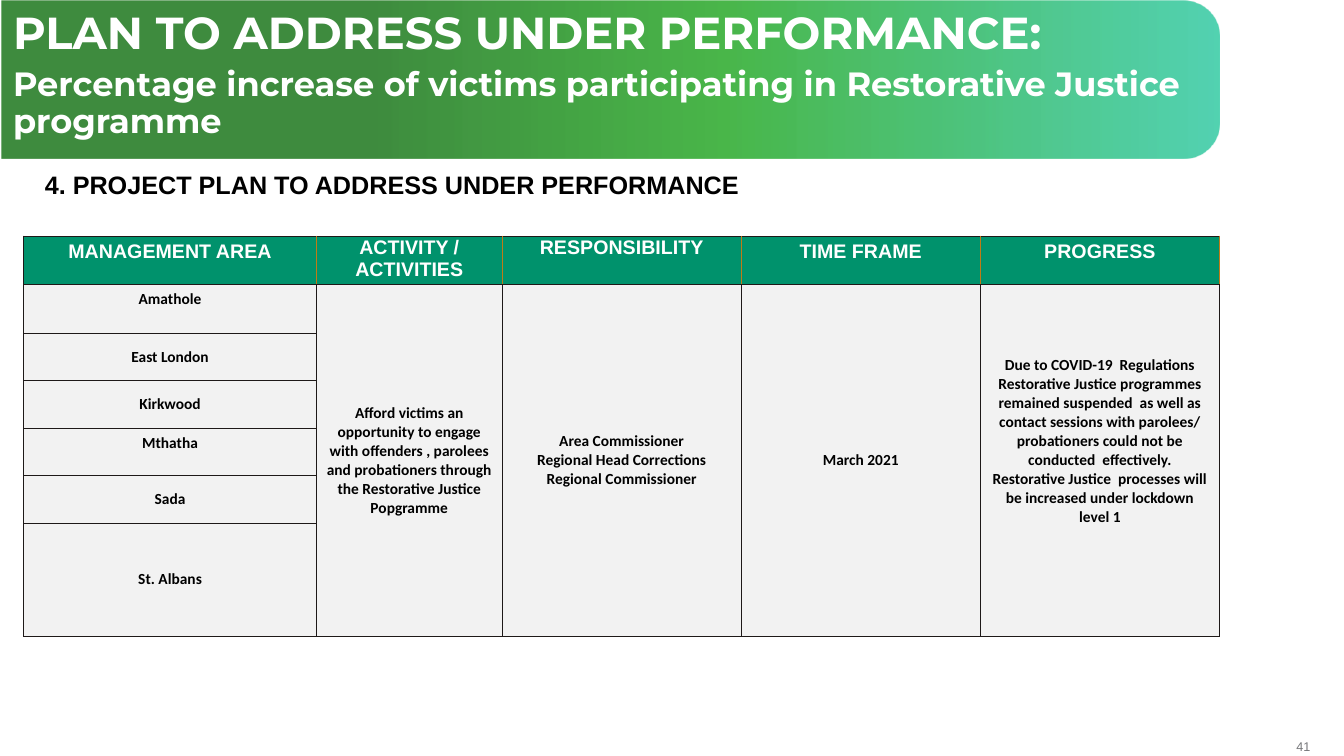
import pptx
import pptx.util
import pptx.oxml
import pptx.oxml.ns
import pptx.dml.color
import pptx.enum.shapes
import pptx.enum.text

Pt = pptx.util.Pt
ALIGN = pptx.enum.text.PP_ALIGN
ANCHOR = pptx.enum.text.MSO_ANCHOR
NAMESPACE = pptx.oxml.ns.nsdecls("a")
COLORS = {
    "white": "FFFFFF", "black": "000000", "gray": "77787B",
    "header": "00926C", "body": "F2F2F2", "border": "1E1918", "divider": "BF7B17",
}


def write_text(frame, lines, font, color, sizes, bold=True, align=ALIGN.LEFT, spacing=None):
    frame.word_wrap = True
    for index, line in enumerate(lines):
        paragraph = frame.paragraphs[0] if index == 0 else frame.add_paragraph()
        paragraph.alignment = align
        for name, value in (spacing or {}).items():
            setattr(paragraph, name, value)
        run = paragraph.add_run()
        run.text = line
        for name, value in {"name": font, "size": Pt(sizes[index]), "bold": bold}.items():
            setattr(run.font, name, value)
        run.font.color.rgb = pptx.dml.color.RGBColor.from_string(COLORS[color])


def style_cell(cell, fill, sides):
    properties = cell._tc.get_or_add_tcPr()
    for side, color in sides.items():
        properties.append(pptx.oxml.parse_xml(
            f'<a:ln{side} {NAMESPACE} w="6350"><a:solidFill>'
            f'<a:srgbClr val="{COLORS[color]}"/></a:solidFill></a:ln{side}>'))
    cell.fill.solid()
    cell.fill.fore_color.rgb = pptx.dml.color.RGBColor.from_string(COLORS[fill])


presentation = pptx.Presentation()
presentation.slide_width = Pt(960)
presentation.slide_height = Pt(540)
slide = presentation.slides.add_slide(presentation.slide_layouts[6])
shapes = slide.shapes

page_number = shapes.add_textbox(Pt(908), Pt(527.8), Pt(28), Pt(10.8)).text_frame
for side in ("left", "top", "right", "bottom"):
    setattr(page_number, f"margin_{side}", 0)
page_number.vertical_anchor = ANCHOR.MIDDLE
write_text(page_number, ["41"], "Arial", "gray", [9], bold=False, align=ALIGN.RIGHT)

banner = shapes.add_shape(pptx.enum.shapes.MSO_SHAPE.ROUND_2_SAME_RECTANGLE,
                          Pt(379.4), Pt(-378), Pt(113), Pt(870))
banner.rotation = 90
banner.adjustments[0] = 0.233
banner.adjustments[1] = 0
banner.shadow.inherit = False
banner.line.fill.background()
stops = "".join(
    f'<a:gs pos="{position * 1000}"><a:srgbClr val="{color}">'
    f'<a:alpha val="{alpha * 1000}"/></a:srgbClr></a:gs>'
    for position, color, alpha in ((30, "006600", 75), (59, "009900", 71), (100, "00BC8D", 67)))
banner._element.spPr.find(pptx.oxml.ns.qn("a:prstGeom")).addnext(pptx.oxml.parse_xml(
    f'<a:gradFill {NAMESPACE} rotWithShape="1"><a:gsLst>{stops}</a:gsLst>'
    '<a:lin ang="16200000" scaled="0"/></a:gradFill>'))

heading = shapes.add_textbox(0, Pt(117.4), Pt(720), Pt(29)).text_frame
heading.margin_left = Pt(32)
write_text(heading, ["4. PROJECT PLAN TO ADDRESS UNDER PERFORMANCE"], "Arial", "black", [18])

headers = ["MANAGEMENT AREA", "ACTIVITY / ACTIVITIES", "RESPONSIBILITY", "TIME FRAME", "PROGRESS"]
areas = ["Amathole", "East London", "Kirkwood", "Mthatha", "Sada", "St. Albans"]
details = [
    ["Afford victims an opportunity to engage with offenders , parolees and probationers "
     "through the Restorative Justice Popgramme"],
    ["Area Commissioner", "Regional Head Corrections", "Regional Commissioner"],
    ["March 2021"],
    ["Due to COVID-19  Regulations Restorative Justice programmes remained suspended  "
     "as well as contact sessions with parolees/ probationers could not be conducted  "
     "effectively. Restorative Justice  processes will be increased under lockdown level 1"],
]
column_widths = [209, 132.7, 170.8, 170.8, 170.8]
row_heights = [34.6, 35, 33.8, 34, 33.6, 34, 80.8]

table = shapes.add_table(len(row_heights), len(column_widths), Pt(17), Pt(168.6),
                         Pt(sum(column_widths)), Pt(sum(row_heights))).table
table.horz_banding = False
table.first_row = False
for column, width in zip(table.columns, column_widths):
    column.width = Pt(width)
for row, height in zip(table.rows, row_heights):
    row.height = Pt(height)

for row_index in range(len(row_heights)):
    for column_index in range(len(column_widths)):
        is_header = row_index == 0
        sides = dict.fromkeys("LRTB", "border")
        if is_header:
            sides["R"] = "divider"
            if column_index > 0:
                sides["L"] = "divider"
        style_cell(table.cell(row_index, column_index), "header" if is_header else "body", sides)

for column_index, title in enumerate(headers):
    cell = table.cell(0, column_index)
    if column_index in (1, 2):
        for side, margin in {"left": 0.7, "top": 0.7, "right": 0.7, "bottom": 0}.items():
            setattr(cell, f"margin_{side}", Pt(margin))
    write_text(cell.text_frame, [title], "Arial", "white", [14], align=ALIGN.CENTER)

for row_index, area in enumerate(areas, 1):
    cell = table.cell(row_index, 0)
    cell.vertical_anchor = ANCHOR.TOP if area in ("Amathole", "Mthatha") else ANCHOR.MIDDLE
    write_text(cell.text_frame, [area], "Calibri", "black", [11], align=ALIGN.CENTER)

for column_index, lines in enumerate(details, 1):
    cell = table.cell(1, column_index)
    cell.merge(table.cell(len(areas), column_index))
    cell.vertical_anchor = ANCHOR.MIDDLE
    write_text(cell.text_frame, lines, "Calibri", "black", [11] * len(lines), align=ALIGN.CENTER)
table.cell(1, 4).margin_bottom = Pt(30.6)

title_frame = shapes.add_textbox(Pt(2.2), Pt(4.3), Pt(862.6), Pt(41)).text_frame
write_text(title_frame,
           ["PLAN TO ADDRESS UNDER PERFORMANCE:",
            "Percentage increase of victims participating in Restorative Justice programme"],
           "Montserrat", "white", [32, 24],
           spacing={"line_spacing": 0.9, "space_after": Pt(6)})

presentation.save("out.pptx")
